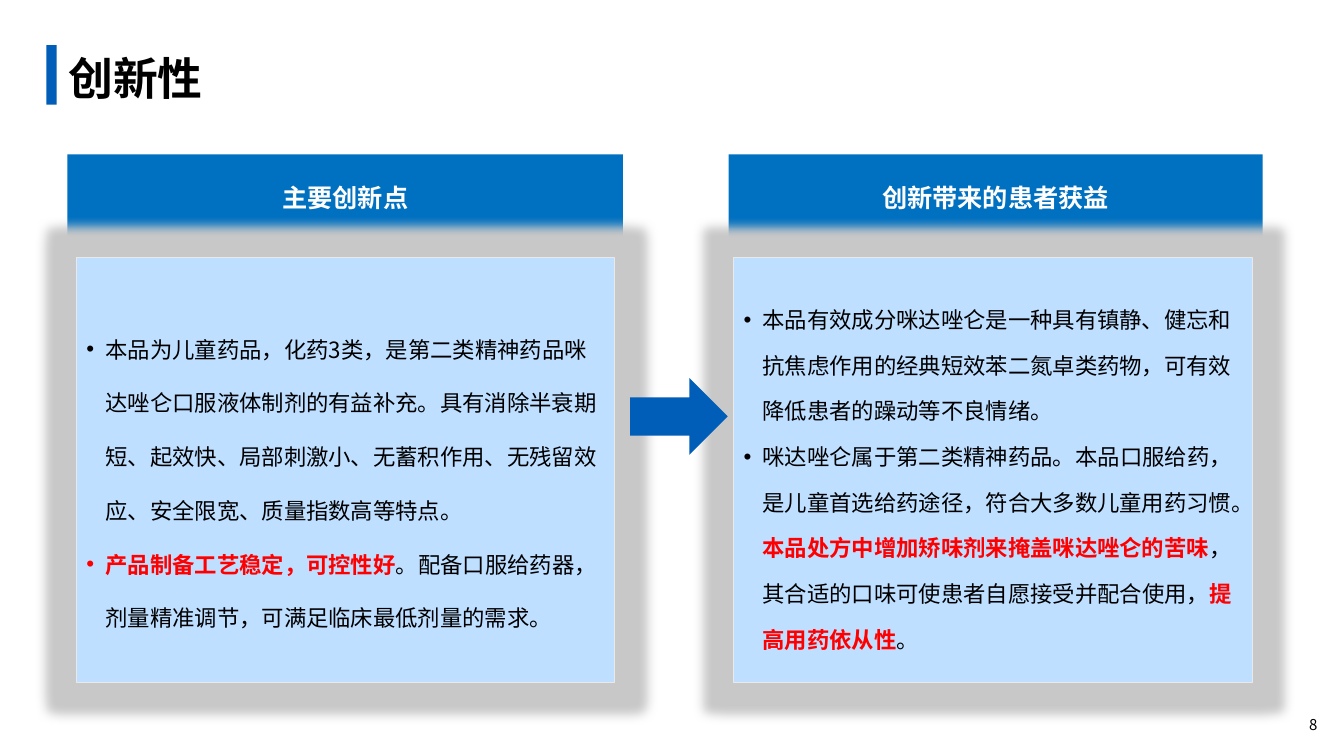
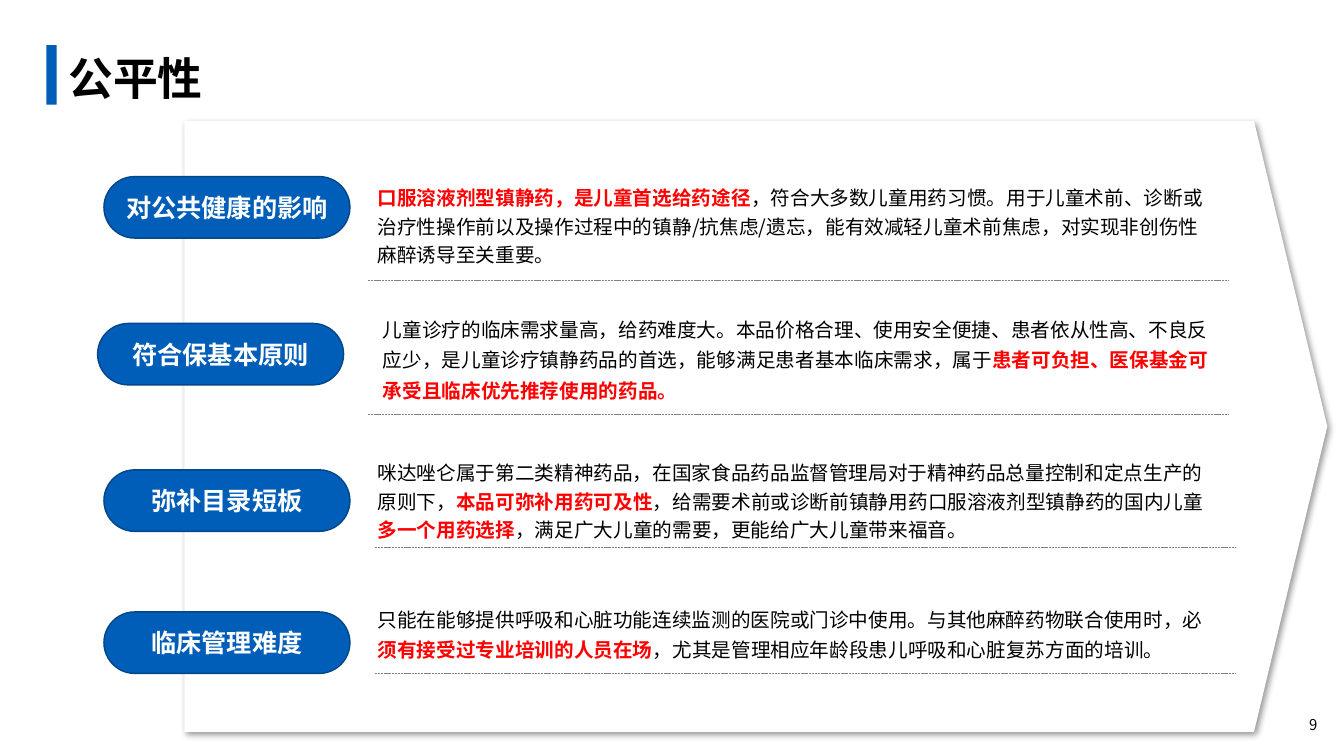
from dataclasses import dataclass

import pptx
import pptx.dml.color
import pptx.enum.dml
import pptx.enum.shapes
import pptx.enum.text
import pptx.oxml
import pptx.oxml.ns
import pptx.presentation
import pptx.shapes.autoshape
import pptx.slide
import pptx.text.text
import pptx.util
from lxml import etree

Cm = pptx.util.Cm
Pt = pptx.util.Pt
RGBColor = pptx.dml.color.RGBColor
Shape = pptx.enum.shapes.MSO_SHAPE
Anchor = pptx.enum.text.MSO_ANCHOR
Align = pptx.enum.text.PP_ALIGN
qn = pptx.oxml.ns.qn

BLACK = RGBColor(0x00, 0x00, 0x00)
WHITE = RGBColor(0xFF, 0xFF, 0xFF)
RED = RGBColor(0xFF, 0x00, 0x00)
BRAND_BLUE = RGBColor(0x00, 0x5E, 0xB8)
PILL_EDGE = RGBColor(0x00, 0x46, 0x88)
HEADER_BLUE = RGBColor(0x00, 0x70, 0xC0)
PANEL_BLUE = RGBColor(0xBE, 0xDF, 0xFF)
PANEL_EDGE = RGBColor(0xE9, 0xE9, 0xE9)
RULE_GREY = RGBColor(0x80, 0x80, 0x80)
GLOW_GREY = RGBColor(0xC8, 0xC8, 0xC8)

FONT = "Noto Sans CJK SC"
NUMBER_FONT = "Noto Sans CJK JP"

HEADER_TOP, HEADER_HEIGHT = 3.89, 2.18
PANEL_TOP, PANEL_HEIGHT = 6.5, 10.69
PILL_WIDTH, PILL_HEIGHT = 6.2, 1.55
TEXT_WIDTH, RULE_WIDTH = 21.49, 21.68


@dataclass(frozen=True)
class Box:
    left: float
    top: float
    width: float
    height: float

    def lengths(self) -> tuple[pptx.util.Cm, ...]:
        return Cm(self.left), Cm(self.top), Cm(self.width), Cm(self.height)


@dataclass(frozen=True)
class Span:
    text: str
    key: bool = False


@dataclass(frozen=True)
class Panel:
    heading: str
    header_left: float
    header_width: float
    left: float
    width: float
    spacing: float
    points: list[list[Span]]


@dataclass(frozen=True)
class Topic:
    label: str
    pill_left: float
    pill_top: float
    text_left: float
    text_top: float
    text_height: float
    spacing: float
    rule_left: float
    rule_top: float
    spans: list[Span]


PANELS = [
    Panel("主要创新点", 1.7, 14, 1.93, 13.56, 2.0, [
        [Span("本品为儿童药品，化药3类，是第二类精神药品咪达唑仑⼝服液体制剂的有益补充。"
              "具有消除半衰期短、起效快、局部刺激小、无蓄积作用、无残留效应、安全限宽、质量指数高等特点。")],
        [Span("产品制备⼯艺稳定，可控性好", True),
         Span("。配备口服给药器，剂量精准调节，可满⾜临床最低剂量的需求。")],
    ]),
    Panel("创新带来的患者获益", 18.36, 13.46, 18.49, 13.08, 1.7, [
        [Span("本品有效成分咪达唑仑是一种具有镇静、健忘和抗焦虑作用的经典短效苯二氮卓类药物，"
              "可有效降低患者的躁动等不良情绪。")],
        [Span("咪达唑仑属于第二类精神药品。本品口服给药，是儿童首选给药途径，符合大多数儿童用药习惯。"),
         Span("本品处方中增加矫味剂来掩盖咪达唑仑的苦味", True),
         Span("，其合适的口味可使患者自愿接受并配合使用，"),
         Span("提高用药依从性", True),
         Span("。")],
    ]),
]

TOPICS = [
    Topic("对公共健康的影响", 2.62, 4.45, 9.27, 4.45, 2.41, 1.2, 9.27, 7.06, [
        Span("口服溶液剂型镇静药，是儿童首选给药途径", True),
        Span("，符合大多数儿童用药习惯。用于儿童术前、诊断或治疗性操作前以及操作过程中的镇静/抗焦虑/遗忘，"
             "能有效减轻儿童术前焦虑，对实现非创伤性麻醉诱导至关重要。"),
    ]),
    Topic("符合保基本原则", 2.46, 8.15, 9.4, 7.7, 2.59, 1.3, 9.27, 10.44, [
        Span("儿童诊疗的临床需求量高，给药难度大。本品价格合理、使用安全便捷、患者依从性高、不良反应少，"
             "是儿童诊疗镇静药品的首选，能够满足患者基本临床需求，属于"),
        Span("患者可负担、医保基金可承受且临床优先推荐使用的药品。", True),
    ]),
    Topic("弥补目录短板", 2.62, 11.84, 9.27, 11.38, 2.41, 1.2, 9.45, 13.79, [
        Span("咪达唑仑属于第二类精神药品，在国家食品药品监督管理局对于精神药品总量控制和定点生产的原则下，"),
        Span("本品可弥补用药可及性", True),
        Span("，给需要术前或诊断前镇静用药口服溶液剂型镇静药的国内儿童"),
        Span("多一个用药选择", True),
        Span("，满足广大儿童的需要，更能给广大儿童带来福音。"),
    ]),
    Topic("临床管理难度", 2.62, 15.42, 9.27, 15.01, 1.8, 1.3, 9.45, 16.97, [
        Span("只能在能够提供呼吸和心脏功能连续监测的医院或门诊中使用。与其他麻醉药物联合使用时，必"),
        Span("须有接受过专业培训的人员在场", True),
        Span("，尤其是管理相应年龄段患儿呼吸和心脏复苏方面的培训。"),
    ]),
]


def style_paragraph(paragraph: pptx.text.text._Paragraph, size: float,
                    color: RGBColor = BLACK, bold: bool = False, font: str = FONT) -> None:
    paragraph.font.size = Pt(size)
    paragraph.font.bold = bold
    paragraph.font.color.rgb = color
    paragraph.font.name = font
    defaults = paragraph._p.pPr.find(qn("a:defRPr"))
    etree.SubElement(defaults, qn("a:ea"), typeface=font)


def add_spans(paragraph: pptx.text.text._Paragraph, spans: list[Span],
              size: float, spacing: float) -> None:
    paragraph.line_spacing = spacing
    style_paragraph(paragraph, size)
    for span in spans:
        run = paragraph.add_run()
        run.text = span.text
        if span.key:
            run.font.bold = True
            run.font.color.rgb = RED


def add_bullet(paragraph: pptx.text.text._Paragraph) -> None:
    properties = paragraph._p.get_or_add_pPr()
    properties.set("marL", str(Cm(0.48)))
    properties.set("indent", str(-Cm(0.48)))
    etree.SubElement(properties, qn("a:buFont"), typeface="Arial")
    etree.SubElement(properties, qn("a:buChar"), char="•")


def add_block(slide: pptx.slide.Slide, kind: Shape, box: Box, fill: RGBColor,
              edge: RGBColor | None = None, edge_width: float = 1) -> pptx.shapes.autoshape.Shape:
    block = slide.shapes.add_shape(kind, *box.lengths())
    block.shadow.inherit = False
    block.fill.solid()
    block.fill.fore_color.rgb = fill
    if edge is None:
        block.line.fill.background()
    else:
        block.line.color.rgb = edge
        block.line.width = Pt(edge_width)
    return block


def add_label(block: pptx.shapes.autoshape.Shape, text: str) -> None:
    block.text_frame.vertical_anchor = Anchor.MIDDLE
    paragraph = block.text_frame.paragraphs[0]
    paragraph.text = text
    paragraph.alignment = Align.CENTER
    style_paragraph(paragraph, 18, WHITE, True)


def add_text_frame(slide: pptx.slide.Slide, box: Box) -> pptx.text.text.TextFrame:
    frame = slide.shapes.add_textbox(*box.lengths()).text_frame
    frame.word_wrap = True
    return frame


def add_effect(block: pptx.shapes.autoshape.Shape, name: str, color: RGBColor,
               opacity: int, **settings: int) -> None:
    effects = block._element.spPr.find(qn("a:effectLst"))
    effect = etree.SubElement(effects, qn(name), {key: str(value) for key, value in settings.items()})
    tint = etree.SubElement(effect, qn("a:srgbClr"), val=str(color))
    etree.SubElement(tint, qn("a:alpha"), val=str(opacity * 1000))


def add_page(deck: pptx.presentation.Presentation, title: str, number: int) -> pptx.slide.Slide:
    slide = deck.slides.add_slide(deck.slide_layouts[6])
    add_block(slide, Shape.RECTANGLE, Box(1.17, 1.14, 0.26, 1.5), BRAND_BLUE)

    folio = add_text_frame(slide, Box(31.83, 17.75, 1.7, 1.02))
    folio.vertical_anchor = Anchor.MIDDLE
    folio.margin_left = folio.margin_right = Cm(0.33)
    folio.margin_top = folio.margin_bottom = Cm(0.18)
    folio.text = str(number)
    folio.paragraphs[0].alignment = Align.RIGHT
    style_paragraph(folio.paragraphs[0], 10.7, font=NUMBER_FONT)

    heading = add_text_frame(slide, Box(1.47, 1.14, 27.43, 1.65))
    heading.vertical_anchor = Anchor.MIDDLE
    heading.text = title
    style_paragraph(heading.paragraphs[0], 32, bold=True)
    return slide


def add_panel(slide: pptx.slide.Slide, panel: Panel) -> None:
    header_box = Box(panel.header_left, HEADER_TOP, panel.header_width, HEADER_HEIGHT)
    add_label(add_block(slide, Shape.RECTANGLE, header_box, HEADER_BLUE), panel.heading)
    body = add_block(slide, Shape.RECTANGLE, Box(panel.left, PANEL_TOP, panel.width, PANEL_HEIGHT),
                     PANEL_BLUE, PANEL_EDGE, 0.75)
    add_effect(body, "a:glow", GLOW_GREY, 100, rad=Pt(15))
    frame = body.text_frame
    frame.vertical_anchor = Anchor.MIDDLE
    for index, spans in enumerate(panel.points):
        paragraph = frame.add_paragraph() if index else frame.paragraphs[0]
        paragraph.alignment = Align.LEFT
        add_bullet(paragraph)
        add_spans(paragraph, spans, 16, panel.spacing)


def add_topic(slide: pptx.slide.Slide, topic: Topic) -> None:
    pill = add_block(slide, Shape.ROUNDED_RECTANGLE,
                     Box(topic.pill_left, topic.pill_top, PILL_WIDTH, PILL_HEIGHT),
                     BRAND_BLUE, PILL_EDGE)
    pill.adjustments[0] = 0.5
    add_label(pill, topic.label)

    rule = slide.shapes.add_connector(
        pptx.enum.shapes.MSO_CONNECTOR.STRAIGHT, Cm(topic.rule_left), Cm(topic.rule_top),
        Cm(topic.rule_left + RULE_WIDTH), Cm(topic.rule_top))
    rule.line.color.rgb = RULE_GREY
    rule.line.width = Pt(0.5)
    rule.line.dash_style = pptx.enum.dml.MSO_LINE.SQUARE_DOT
    etree.SubElement(rule._element.spPr, qn("a:effectLst"))

    frame = add_text_frame(slide, Box(topic.text_left, topic.text_top, TEXT_WIDTH, topic.text_height))
    frame.auto_size = pptx.enum.text.MSO_AUTO_SIZE.SHAPE_TO_FIT_TEXT
    add_spans(frame.paragraphs[0], topic.spans, 14, topic.spacing)


def main() -> None:
    deck = pptx.Presentation()
    deck.slide_width, deck.slide_height = Cm(33.87), Cm(19.05)

    innovation = add_page(deck, "创新性", 8)
    for panel in PANELS:
        add_panel(innovation, panel)
    add_block(innovation, Shape.RIGHT_ARROW, Box(15.88, 9.53, 2.46, 1.93), BRAND_BLUE)

    fairness = add_page(deck, "公平性", 9)
    backdrop = add_block(fairness, Shape.PENTAGON, Box(4.65, 3.05, 28.8, 15.39), WHITE)
    backdrop.adjustments[0] = 0.12
    add_effect(backdrop, "a:outerShdw", BLACK, 40, blurRad=Pt(4), dist=Pt(3), dir=45 * 60000)
    for topic in TOPICS:
        add_topic(fairness, topic)

    deck.save("out.pptx")


if __name__ == "__main__":
    main()
